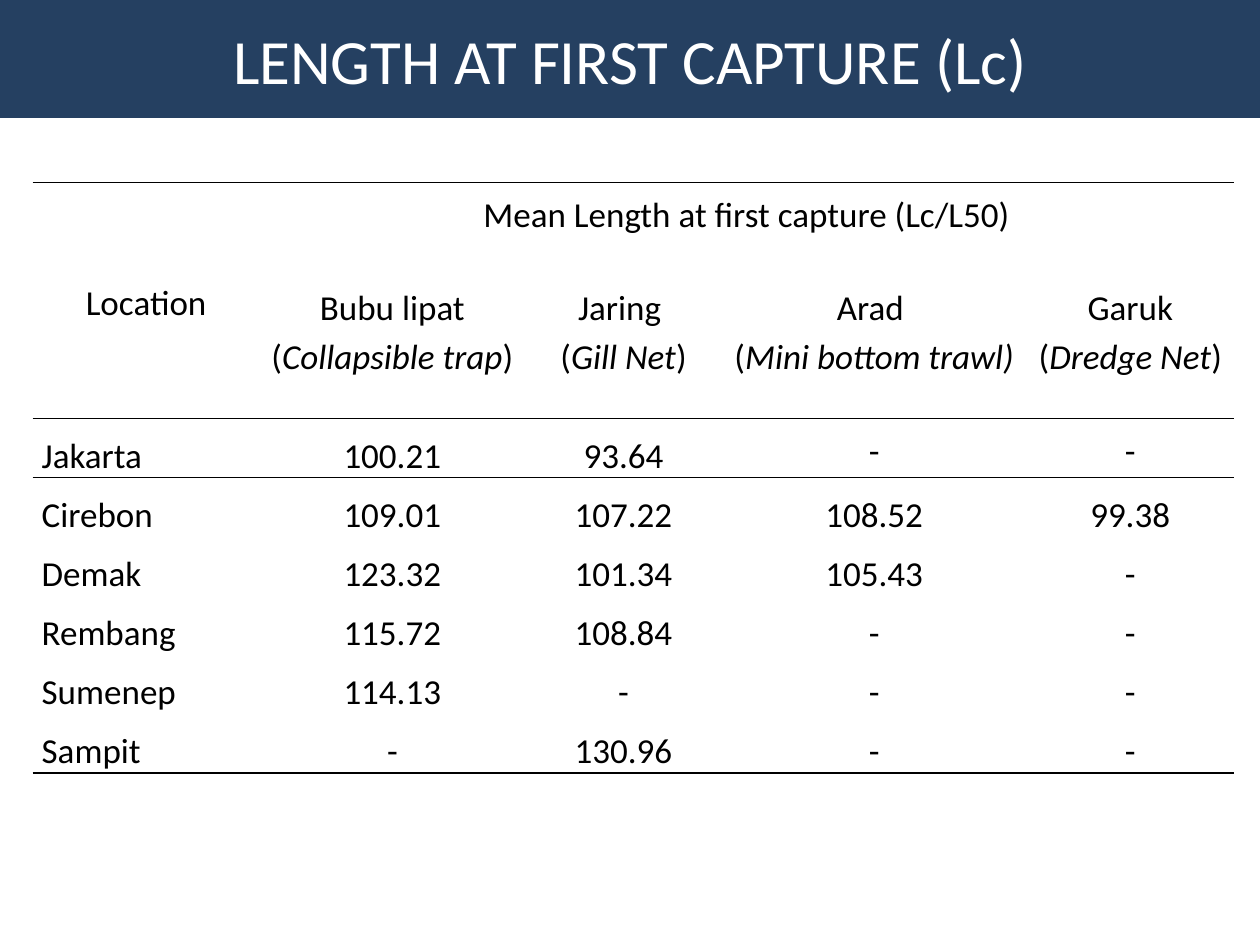
from dataclasses import dataclass
from lxml.etree import SubElement as Sub
from pptx import Presentation as Deck
from pptx.dml.color import RGBColor as Rgb
from pptx.enum.shapes import MSO_SHAPE as Kind
from pptx.enum.text import MSO_ANCHOR as Anchor, PP_ALIGN as Align
from pptx.oxml.ns import qn
from pptx.util import Cm, Pt


@dataclass(frozen=True)
class Theme:
    face: str = "Calibri"
    navy: str = "254061"
    white: str = "FFFFFF"
    black: str = "000000"
    head: int = 36
    body: int = 20
    rule: int = 1
    lead: float = 1.15
    plain: str = "{2D5ABB26-0587-4C30-8999-92F81FD0307C}"


class Page:
    """Draws styled elements on one slide."""

    def __init__(self, slide, theme):
        self.slide, self.theme = slide, theme

    def font(self, para, size, color):
        para.font.name = self.theme.face
        para.font.size = Pt(size)
        para.font.color.rgb = Rgb.from_string(color)

    def title(self, text, wide, high):
        bar = self.slide.shapes.add_shape(Kind.RECTANGLE, 0, 0, wide, high)
        bar.shadow.inherit = False
        bar.fill.solid()
        bar.fill.fore_color.rgb = Rgb.from_string(self.theme.navy)
        bar.line.fill.background()
        frame = bar.text_frame
        frame.word_wrap = True
        frame.vertical_anchor = Anchor.MIDDLE
        para = frame.paragraphs[0]
        para.text = text
        para.alignment = Align.CENTER
        self.font(para, self.theme.head, self.theme.white)

    def edge(self, cell, tag):
        line = Sub(cell._tc.get_or_add_tcPr(), qn(tag), w=str(Pt(self.theme.rule)))
        Sub(Sub(line, qn("a:solidFill")), qn("a:srgbClr"), val=self.theme.black)

    def label(self, cell, text, align, anchor):
        cell.margin_left = cell.margin_right = Cm(0.18)
        cell.margin_top = cell.margin_bottom = 0
        cell.vertical_anchor = anchor
        cell.text = text.replace("*", "")
        for para, line in zip(cell.text_frame.paragraphs, text.split("\n")):
            para.clear()
            para.alignment = align
            para.line_spacing = self.theme.lead
            self.font(para, self.theme.body, self.theme.black)
            for i, part in enumerate(line.split("*")):
                if part:
                    run = para.add_run()
                    run.text = part
                    if i % 2:
                        run.font.italic = True

    def table(self, rows, left, top, cols, highs, spans):
        last = len(rows) - 1
        grid = self.slide.shapes.add_table(
            len(rows), len(cols), left, top, sum(cols), sum(highs)).table
        grid.first_row = grid.horz_banding = False
        grid._tbl.tblPr[0].text = self.theme.plain
        for col, wide in zip(grid.columns, cols):
            col.width = wide
        for row, high in zip(grid.rows, highs):
            row.height = high
        for start, end in spans:
            grid.cell(*start).merge(grid.cell(*end))
        for r, row in enumerate(rows):
            for c, text in enumerate(row):
                cell = grid.cell(r, c)
                if not cell.is_spanned:
                    mid = r < 2 or (r == 2 and text == "-")
                    self.label(cell, text,
                               Align.LEFT if r > 1 and c == 0 else Align.CENTER,
                               Anchor.MIDDLE if mid else Anchor.BOTTOM)
                if r in (0, 2):
                    self.edge(cell, "a:lnT")
                if r + cell.span_height - 1 in (1, last):
                    self.edge(cell, "a:lnB")
                cell.fill.background()


ROWS = [
    ["Location", "Mean Length at first capture (Lc/L50)", "", "", ""],
    ["", "Bubu lipat (*Collapsible trap*)", "Jaring \n(*Gill Net*)",
     "Arad \n(*Mini bottom trawl)*", "Garuk (*Dredge Net*)"],
    ["Jakarta", "100.21", "93.64", "-", "-"],
    ["Cirebon", "109.01", "107.22", "108.52", "99.38"],
    ["Demak", "123.32", "101.34", "105.43", "-"],
    ["Rembang", "115.72", "108.84", "-", "-"],
    ["Sumenep", "114.13", "-", "-", "-"],
    ["Sampit", "-", "130.96", "-", "-"],
]


def main():
    deck = Deck()
    deck.slide_width, deck.slide_height = Cm(25.4), Cm(19.05)
    page = Page(deck.slides.add_slide(deck.slide_layouts[6]), Theme())
    page.title("LENGTH AT FIRST CAPTURE (Lc)", deck.slide_width, Cm(2.38))
    cols = [Cm(w) for w in (4.57, 5.36, 3.96, 6.15, 4.17)]
    unit = Cm(1.19)
    highs = [unit * 3 if r == 1 else unit for r in range(len(ROWS))]
    spans = [((0, 0), (1, 0)), ((0, 1), (0, 4))]
    page.table(ROWS, Cm(0.66), Cm(3.68), cols, highs, spans)
    deck.save("out.pptx")


if __name__ == "__main__":
    main()
